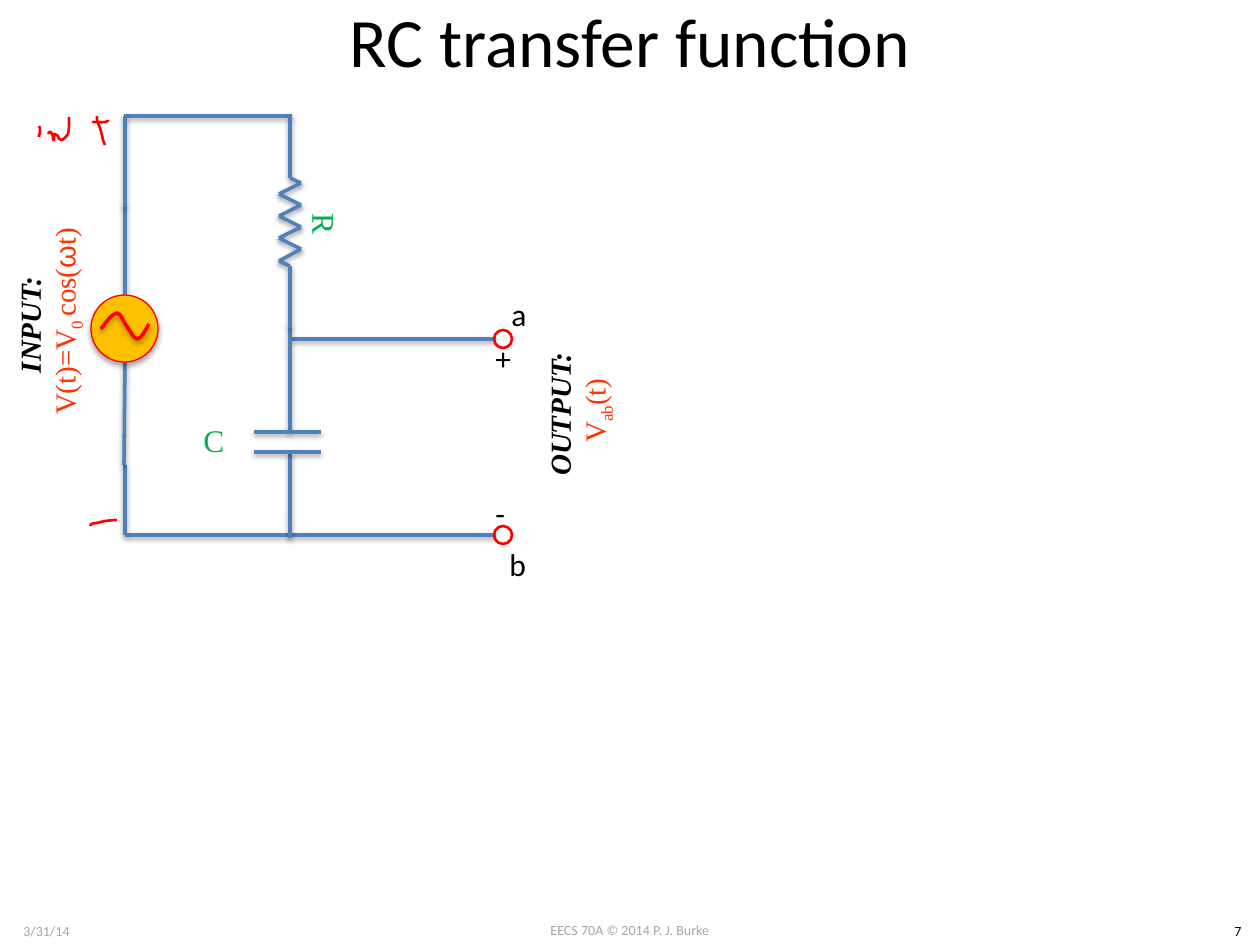
from lxml import etree
from pptx import Presentation
from pptx.dml.color import RGBColor
from pptx.enum.shapes import MSO_CONNECTOR, MSO_SHAPE
from pptx.enum.text import MSO_ANCHOR, MSO_AUTO_SIZE, PP_ALIGN
from pptx.oxml.ns import qn
from pptx.util import Emu, Pt

LINE, OVAL = MSO_CONNECTOR.STRAIGHT, MSO_SHAPE.OVAL
MID, TOP = MSO_ANCHOR.MIDDLE, MSO_ANCHOR.TOP
CENTER, LEFT = PP_ALIGN.CENTER, PP_ALIGN.LEFT
GROW, FIXED = MSO_AUTO_SIZE.SHAPE_TO_FIT_TEXT, MSO_AUTO_SIZE.NONE

THEME = {
    "wire": "4F81BD", "ink": "FF0000", "fill": "FFC000", "black": "000000",
    "grey": "A6A6A6", "part": "00B050", "volt": "FF3300",
    "sans": "Calibri", "serif": "Times New Roman", "greek": "Arial",
    "title": 39.6, "label": 18, "port": 16.6, "foot": 8,
}

# Text styles: font, size, colour, bold, italic
STYLES = {
    "title": ("sans", "title", "black", False, False),
    "foot": ("sans", "foot", "grey", False, False),
    "page": ("sans", "foot", "black", False, False),
    "node": ("sans", "label", "black", False, False),
    "part": ("serif", "label", "part", False, False),
    "head": ("serif", "port", "black", True, True),
    "volt": ("serif", "port", "volt", False, False),
    "greek": ("greek", "port", "volt", False, False),
}

# Text boxes: box, layout, paragraphs of (text, style, subscript) runs
PLAIN = {"anchor": MID, "align": CENTER, "size": FIXED, "wrap": True}
FOOT = {**PLAIN, "anchor": TOP, "size": GROW}
NODE = {**FOOT, "align": LEFT, "wrap": False}
UP = {**PLAIN, "turn": 270}
DOWN = {**PLAIN, "turn": 90}
TEXTS = [
    ((483, 915, 294, 30), FOOT, [[("EECS 70A © 2014 P. J. Burke", "foot")]]),
    ((0, 916, 93, 30), FOOT, [[("3/31/14", "foot")]]),
    ((1216, 916, 44, 30), FOOT, [[("7", "page")]]),
    ((63, 1, 1134, 78), PLAIN, [[("RC transfer function", "title")]]),
    ((-84, 283, 266, 77), UP, [
        [("INPUT: ", "head")],
        [("V(t)=V", "volt"), ("0 ", "volt", True), ("cos(", "volt"),
         ("ω", "greek"), ("t)", "volt")]]),
    ((446, 372, 266, 77), UP, [
        [("OUTPUT: ", "head")],
        [("V", "volt"), ("ab", "volt", True), ("(t)", "volt")]]),
    ((139, 394, 150, 92), PLAIN, [[("C", "part")]]),
    ((250, 178, 150, 92), DOWN, [[("R", "part")]]),
    ((499, 289, 40, 50), NODE, [[("a", "node")]]),
    ((497, 539, 43, 50), NODE, [[("b", "node")]]),
    ((483, 333, 42, 50), NODE, [[("+", "node")]]),
    ((483, 488, 35, 50), NODE, [[("-", "node")]]),
]

# Circuit wires
SRC, MAIN, END = 125, 290, 496
PATHS = [
    [(SRC, 465), (SRC, 535), (291, 535)],
    [(124, 465), (SRC, 363)],
    [(SRC, 295), (SRC, 204)],
    [(292, 116), (124, 116)],
    [(SRC, 207), (SRC, 116)],
    [(292, 339), (END, 339)],
    [(292, 535), (END, 535)],
    [(MAIN, 325), (MAIN, 353), (MAIN, 432)],
    [(MAIN, 452), (MAIN, 520), (MAIN, 538)],
    [(321, 432), (254, 432)],
    [(321, 452), (254, 452)],
]
ZIGS = [(MAIN + (-11 if k % 2 else 11), 183 + k * 78 // 7) for k in range(8)]
PATHS.append([(MAIN, 116), (MAIN, 178), *ZIGS, (MAIN, 266), (MAIN, 328)])

# Curves: a start point, then three points for each Bezier piece
SINE = [[(101, 329), (107, 321), (112, 314), (117, 313),
         (121, 313), (122, 320), (126, 325), (129, 329), (134, 339),
         (137, 339), (141, 339), (145, 331), (149, 324)]]
NOTES = [
    [[(39, 126), (40, 127), (40, 129), (40, 131),
      (40, 134), (40, 134), (39, 135), (39, 136), (39, 137), (39, 137)],
     [(48, 134), (50, 131), (50, 131), (52, 134),
      (53, 135), (53, 135), (53, 137), (53, 140), (53, 140), (54, 140),
      (54, 137), (54, 136), (54, 134), (55, 134), (57, 135), (58, 136),
      (59, 140), (59, 139), (62, 140), (64, 139), (67, 136), (68, 134),
      (69, 130), (69, 126), (69, 122), (69, 121), (69, 118), (69, 117)]],
    [[(96, 122), (95, 122), (95, 122), (93, 122),
      (96, 122), (107, 123), (108, 121), (108, 120), (108, 120), (108, 120)],
     [(97, 116), (97, 118), (97, 121), (98, 123),
      (100, 127), (101, 131), (102, 135), (103, 139), (103, 142), (105, 145)]],
    [[(90, 526), (91, 523), (95, 523), (97, 523),
      (103, 521), (111, 520), (117, 520)]],
]


def px(n):
    return Emu(round(n * 914400 / 126))


def tint(name):
    return RGBColor.from_string(THEME[name])


def shade(shape, dist=1.6, alpha=38):
    fx = etree.SubElement(shape._element.spPr, qn("a:effectLst"))
    drop = etree.SubElement(fx, qn("a:outerShdw"), blurRad=str(Pt(3.1)),
                            dist=str(Pt(dist)), dir="5400000", rotWithShape="0")
    tone = etree.SubElement(drop, qn("a:srgbClr"), val=THEME["black"])
    etree.SubElement(tone, qn("a:alpha"), val=str(alpha * 1000))


def pen(shape, name, width):
    shape.line.color.rgb = tint(name)
    shape.line.width = Pt(width)


def wire(start, end):
    seg = shapes.add_connector(LINE, *map(px, start + end))
    pen(seg, "wire", 2)
    shade(seg)


def ring(box, width, fill=None):
    disc = shapes.add_shape(OVAL, *map(px, box))
    pen(disc, "ink", width)
    if fill:
        disc.fill.solid()
        disc.fill.fore_color.rgb = tint(fill)
        shade(disc, 1.8, 35)
    else:
        disc.fill.background()
        disc.shadow.inherit = False


def bend(curve):
    """Join each three straight steps into one Bezier piece."""
    steps = list(curve._element.iter(qn("a:lnTo")))
    for first, *rest in zip(steps[::3], steps[1::3], steps[2::3]):
        first.tag = qn("a:cubicBezTo")
        for step in rest:
            first.append(step[0])
            step.getparent().remove(step)


def draw(strokes, width, shadow=False):
    pad = shapes.build_freeform(*map(px, strokes[0][0]), scale=1.0)
    for i, pts in enumerate(strokes):
        if i:
            pad.move_to(*map(px, pts[0]))
        pad.add_line_segments([(px(x), px(y)) for x, y in pts[1:]], close=False)
    curve = pad.convert_to_shape()
    bend(curve)
    curve.fill.background()
    pen(curve, "ink", width)
    if shadow:
        shade(curve)
    else:
        curve.shadow.inherit = False


def write(box, form, paras):
    text = shapes.add_textbox(*map(px, box))
    text.rotation = form.get("turn", 0)
    frame = text.text_frame
    frame.word_wrap, frame.auto_size = form["wrap"], form["size"]
    frame.vertical_anchor = form["anchor"]
    for i, runs in enumerate(paras):
        para = frame.add_paragraph() if i else frame.paragraphs[0]
        para.alignment = form["align"]
        for words, style, *sub in runs:
            run = para.add_run()
            run.text = words
            face, size, hue, bold, slant = STYLES[style]
            looks = {"name": THEME[face], "size": Pt(THEME[size]),
                     "bold": bold, "italic": slant}
            for key, value in looks.items():
                setattr(run.font, key, value)
            run.font.color.rgb = tint(hue)
            if sub:
                run._r.get_or_add_rPr().set("baseline", "-25000")


deck = Presentation()
deck.slide_width, deck.slide_height = px(1260), px(945)
shapes = deck.slides.add_slide(deck.slide_layouts[6]).shapes

# Wires, then source and terminals
for path in PATHS:
    for start, end in zip(path, path[1:]):
        wire(start, end)
ring((91, 295, 67, 67), 0.75, "fill")
draw(SINE, 2, shadow=True)
for top in (330, 526):
    ring((494, top, 18, 18), 1.5)

# Labels and handwritten marks
for item in TEXTS:
    write(*item)
for mark in NOTES:
    draw(mark, 1.5)

deck.save("out.pptx")
